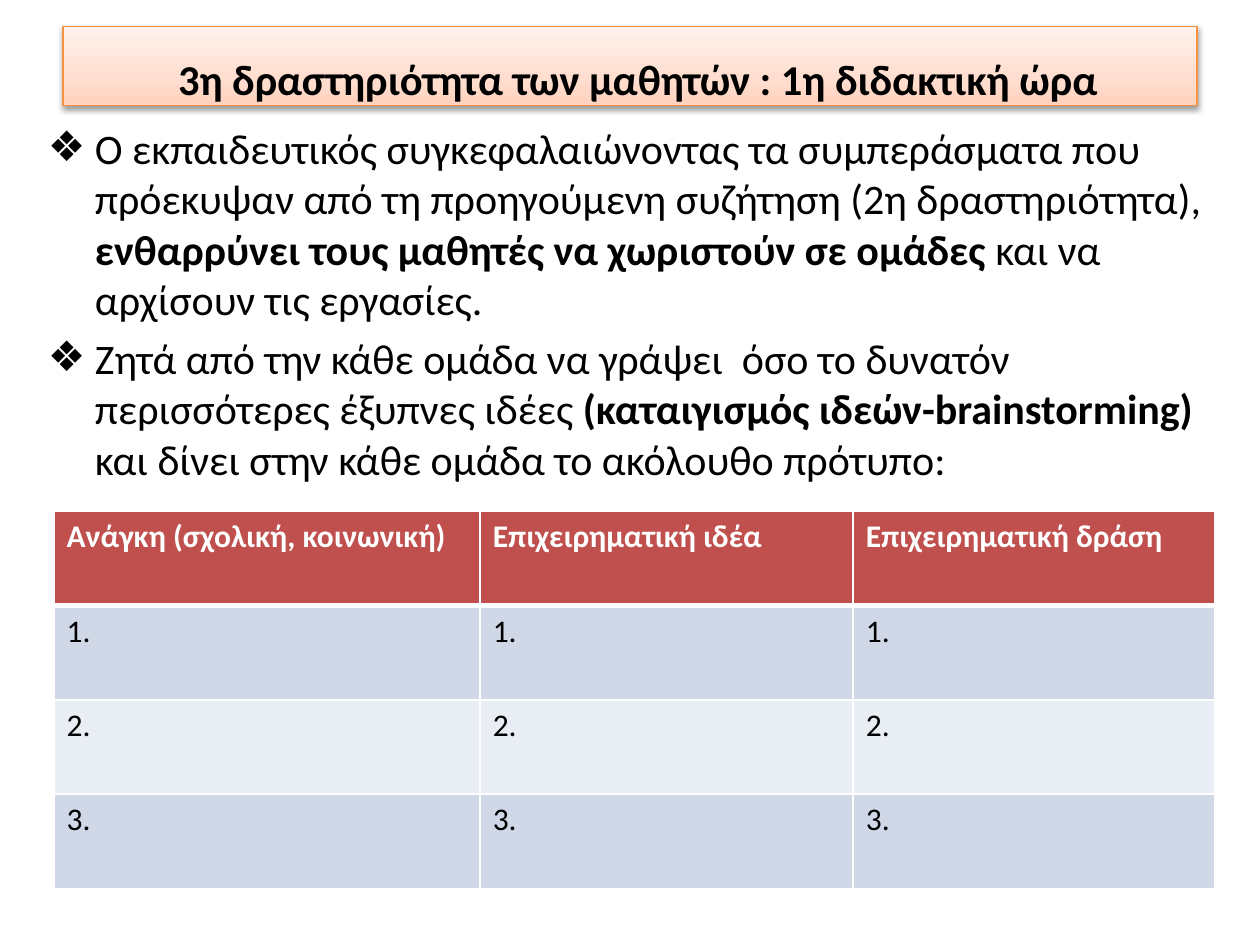
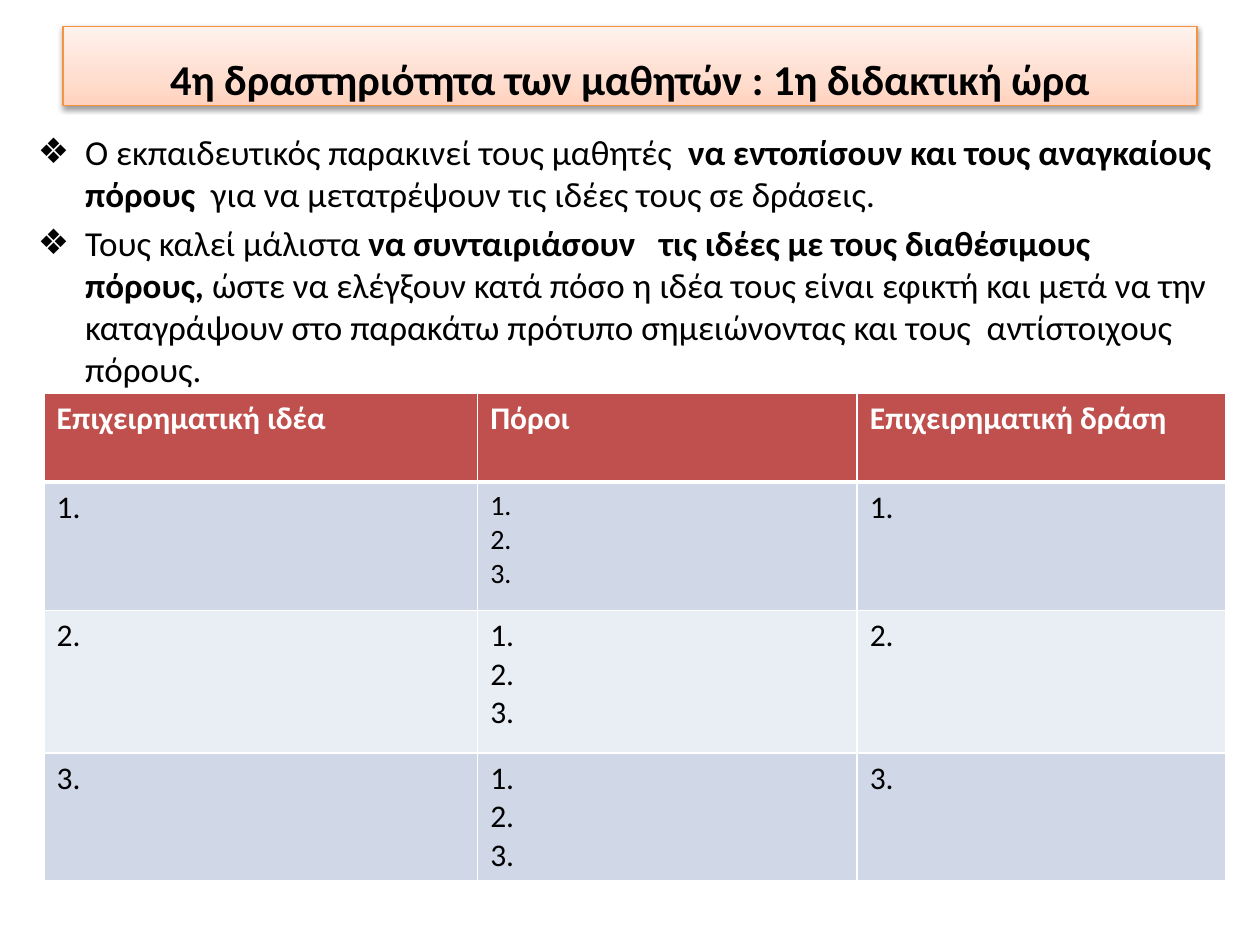
import pptx
import pptx.dml.color
import pptx.enum.text
import pptx.oxml
import pptx.oxml.ns
import pptx.util
from lxml import etree

Cm = pptx.util.Cm
Pt = pptx.util.Pt
RGBColor = pptx.dml.color.RGBColor
qn = pptx.oxml.ns.qn
Anchor = pptx.enum.text.MSO_ANCHOR
Align = pptx.enum.text.PP_ALIGN

FONT = "Calibri"
BLACK = RGBColor(0x00, 0x00, 0x00)
WHITE = RGBColor(0xFF, 0xFF, 0xFF)
BAND_LINE = RGBColor(0xF6, 0x92, 0x40)
BAND_STOPS = [
    (0, RGBColor(0xFF, 0xD2, 0xBD)),
    (35, RGBColor(0xFF, 0xDE, 0xD0)),
    (100, RGBColor(0xFF, 0xF2, 0xED)),
]
HEADER_RED = RGBColor(0xC0, 0x50, 0x4D)
ROW_BLUES = [RGBColor(0xD0, 0xD8, 0xE8), RGBColor(0xE9, 0xED, 0xF4)]

TITLE_BOX = (Cm(1.27), Cm(0.53), Cm(22.86), Cm(1.6))
INDENT = Cm(0.95)
NUMBERS = ["1.", "2.", "3."]
DRAWING = 'xmlns:a="http://schemas.openxmlformats.org/drawingml/2006/main"'


def write_text(paragraph, text, size=18, bold=False, color=BLACK):
    """Add one formatted run to a paragraph."""
    run = paragraph.add_run()
    run.text = text
    run.font.name = FONT
    run.font.size = Pt(size)
    run.font.bold = bold
    run.font.color.rgb = color


def place(shape, box):
    shape.left, shape.top, shape.width, shape.height = box


def paragraphs_of(frame, count):
    """Return the frame's first paragraph followed by enough new ones."""
    return [frame.paragraphs[0]] + [frame.add_paragraph() for _ in range(count - 1)]


def fill_band(band):
    """Peach gradient, orange outline and soft shadow below."""
    band.fill.gradient()
    band.fill.gradient_angle = 90
    band.line.color.rgb = BAND_LINE
    band.line.width = Pt(0.75)
    properties = band.element.spPr
    stops = properties.find(qn("a:gradFill")).find(qn("a:gsLst"))
    for old_stop in list(stops):
        stops.remove(old_stop)
    for percent, color in BAND_STOPS:
        stop = etree.SubElement(stops, qn("a:gs"), pos=str(percent * 1000))
        etree.SubElement(stop, qn("a:srgbClr"), val=str(color))
    properties.append(pptx.oxml.parse_xml(
        f'<a:effectLst {DRAWING}><a:outerShdw blurRad="40000" dist="20000" '
        'dir="5400000" rotWithShape="0"><a:srgbClr val="000000">'
        '<a:alpha val="38000"/></a:srgbClr></a:outerShdw></a:effectLst>'))


def add_title_band(slide, heading, box, left_inset):
    title = slide.shapes.title
    place(title, box)
    fill_band(title)
    frame = title.text_frame
    frame.auto_size = pptx.enum.text.MSO_AUTO_SIZE.NONE
    frame.word_wrap = True
    frame.vertical_anchor = Anchor.BOTTOM
    frame.margin_left, frame.margin_right = left_inset, Cm(0.25)
    frame.margin_top, frame.margin_bottom = Cm(0), Cm(0.03)
    frame.paragraphs[0].alignment = Align.CENTER
    write_text(frame.paragraphs[0], heading, size=24.3, bold=True)


def add_instructions(slide, instructions, box, size):
    """Bulleted list; each item is a list of runs alternating plain and bold."""
    body = slide.placeholders[1]
    place(body, box)
    frame = body.text_frame
    frame.auto_size = pptx.enum.text.MSO_AUTO_SIZE.NONE
    frame.word_wrap = True
    for paragraph, phrases in zip(paragraphs_of(frame, len(instructions)), instructions):
        for index, phrase in enumerate(phrases):
            write_text(paragraph, phrase, size=size, bold=index % 2 == 1)
        layout = paragraph._p.get_or_add_pPr()
        layout.set("marL", str(INDENT))
        layout.set("indent", str(-INDENT))
        spacing = etree.SubElement(layout, qn("a:spcBef"))
        etree.SubElement(spacing, qn("a:spcPct"), val="20000")
        etree.SubElement(layout, qn("a:buFont"), typeface=FONT)
        etree.SubElement(layout, qn("a:buChar"), char="❖")


def set_borders(cell, top, bottom):
    """White rules; side rules are 1 pt wide."""
    properties = cell._tc.get_or_add_tcPr()
    widths = [("L", 1), ("R", 1), ("T", top), ("B", bottom)]
    for index, (side, width) in enumerate(widths):
        properties.insert(index, pptx.oxml.parse_xml(
            f'<a:ln{side} {DRAWING} w="{Pt(width)}"><a:solidFill>'
            f'<a:srgbClr val="{WHITE}"/></a:solidFill></a:ln{side}>'))


def add_template_table(slide, rows, corner, column_widths, row_heights, small_cells=()):
    """Header row plus banded rows; each cell is a list of lines."""
    table = slide.shapes.add_table(
        len(rows), len(column_widths), *corner,
        sum(column_widths), sum(row_heights)).table
    for column, width in zip(table.columns, column_widths):
        column.width = width
    for row, height in zip(table.rows, row_heights):
        row.height = height
    for r, row in enumerate(rows):
        header = r == 0
        for c, lines in enumerate(row):
            cell = table.cell(r, c)
            cell.fill.solid()
            cell.fill.fore_color.rgb = HEADER_RED if header else ROW_BLUES[(r - 1) % 2]
            set_borders(cell, top=3 if r == 1 else 1, bottom=3 if header else 1)
            size = 16 if (r, c) in small_cells else 18
            for paragraph, line in zip(paragraphs_of(cell.text_frame, len(lines)), lines):
                write_text(paragraph, line, size=size, bold=header,
                           color=WHITE if header else BLACK)


def add_activity_slide(deck, heading, left_inset, instructions, body_box, body_size, **table):
    slide = deck.slides.add_slide(deck.slide_layouts[1])
    add_title_band(slide, heading, TITLE_BOX, left_inset)
    add_instructions(slide, instructions, body_box, body_size)
    add_template_table(slide, **table)


def main():
    deck = pptx.Presentation()
    deck.slide_width, deck.slide_height = Cm(25.4), Cm(19.05)

    # Third activity: groups and brainstorming
    add_activity_slide(
        deck,
        heading="3η δραστηριότητα των μαθητών : 1η διδακτική ώρα",
        left_inset=Cm(0.57),
        instructions=[
            ["Ο εκπαιδευτικός συγκεφαλαιώνοντας τα συμπεράσματα που πρόεκυψαν από τη "
             "προηγούμενη συζήτηση (2η δραστηριότητα), ",
             "ενθαρρύνει τους μαθητές να χωριστούν σε ομάδες ",
             "και να αρχίσουν τις εργασίες."],
            ["Ζητά από την κάθε ομάδα να γράψει  όσο το δυνατόν περισσότερες έξυπνες ιδέες ",
             "(καταιγισμός ιδεών-brainstorming) ",
             "και δίνει στην κάθε ομάδα το ακόλουθο πρότυπο:"],
        ],
        body_box=(Cm(0.71), Cm(2.34), Cm(24.21), Cm(16.21)),
        body_size=24,
        rows=[[["Ανάγκη (σχολική, κοινωνική)"], ["Επιχειρηματική ιδέα"],
               ["Επιχειρηματική δράση"]]]
        + [[[number]] * 3 for number in NUMBERS],
        corner=(Cm(1.09), Cm(10.31)),
        column_widths=[Cm(8.59), Cm(7.52), Cm(7.29)],
        row_heights=[Cm(1.9)] * 4,
    )

    # Fourth activity: matching ideas with resources
    add_activity_slide(
        deck,
        heading="4η δραστηριότητα των μαθητών : 1η διδακτική ώρα",
        left_inset=Cm(0.25),
        instructions=[
            ["Ο εκπαιδευτικός παρακινεί τους μαθητές  ",
             "να εντοπίσουν και τους αναγκαίους πόρους",
             "  για να μετατρέψουν τις ιδέες τους σε δράσεις."],
            ["Τους καλεί μάλιστα ",
             "να συνταιριάσουν   τις ιδέες με τους διαθέσιμους πόρους, ",
             "ώστε να ελέγξουν κατά πόσο η ιδέα τους είναι εφικτή και μετά να την "
             "καταγράψουν στο παρακάτω πρότυπο σημειώνοντας και τους  αντίστοιχους πόρους."],
        ],
        body_box=(Cm(0.51), Cm(2.51), Cm(24.21), Cm(15.6)),
        body_size=20,
        rows=[[["Επιχειρηματική ιδέα"], ["Πόροι"], ["Επιχειρηματική δράση"]]]
        + [[[number], NUMBERS, [number]] for number in NUMBERS],
        corner=(Cm(0.89), Cm(7.92)),
        column_widths=[Cm(8.74), Cm(7.65), Cm(7.42)],
        row_heights=[Cm(1.8), Cm(2.59), Cm(2.87), Cm(2.54)],
        small_cells={(1, 1)},
    )

    deck.save("out.pptx")


if __name__ == "__main__":
    main()
